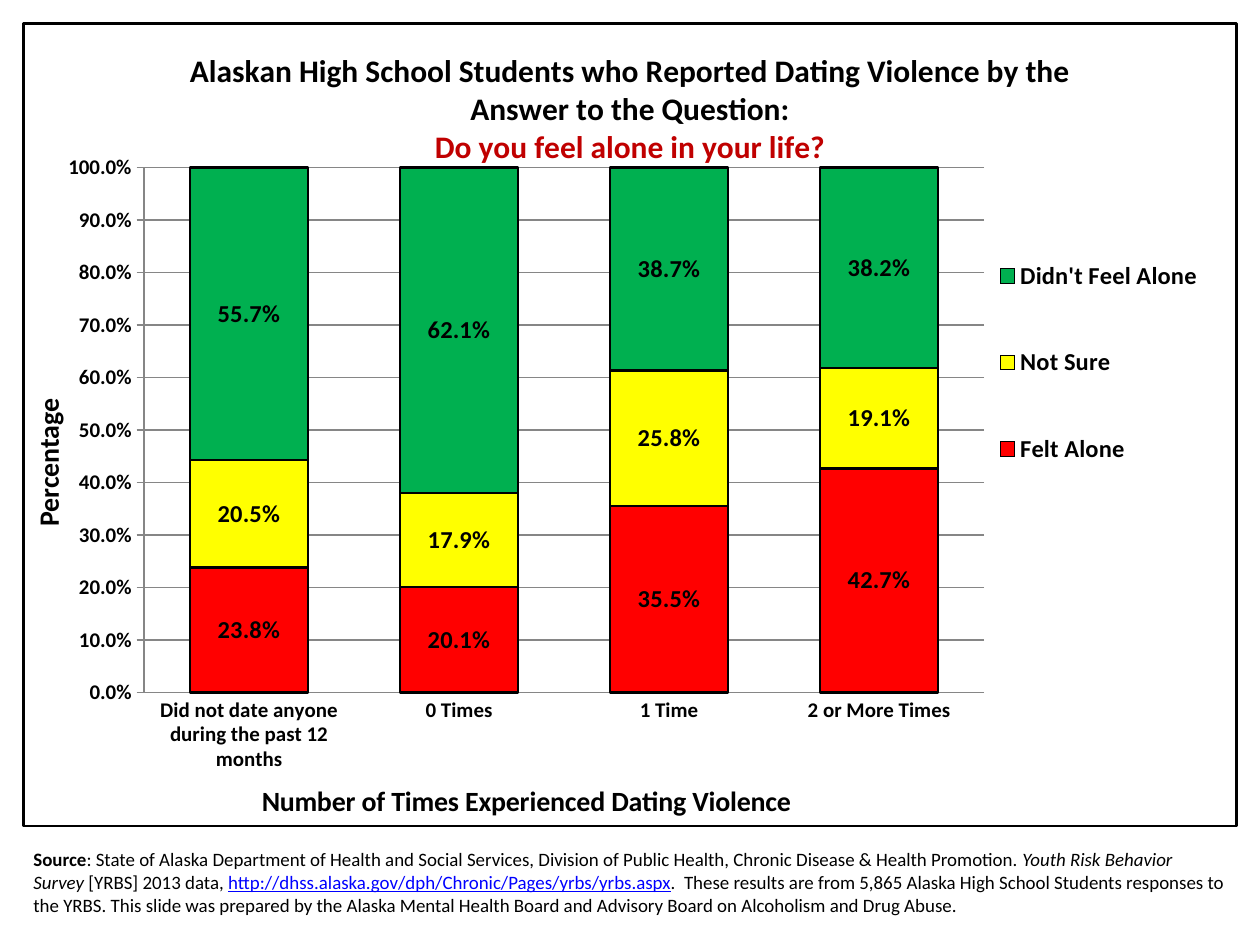
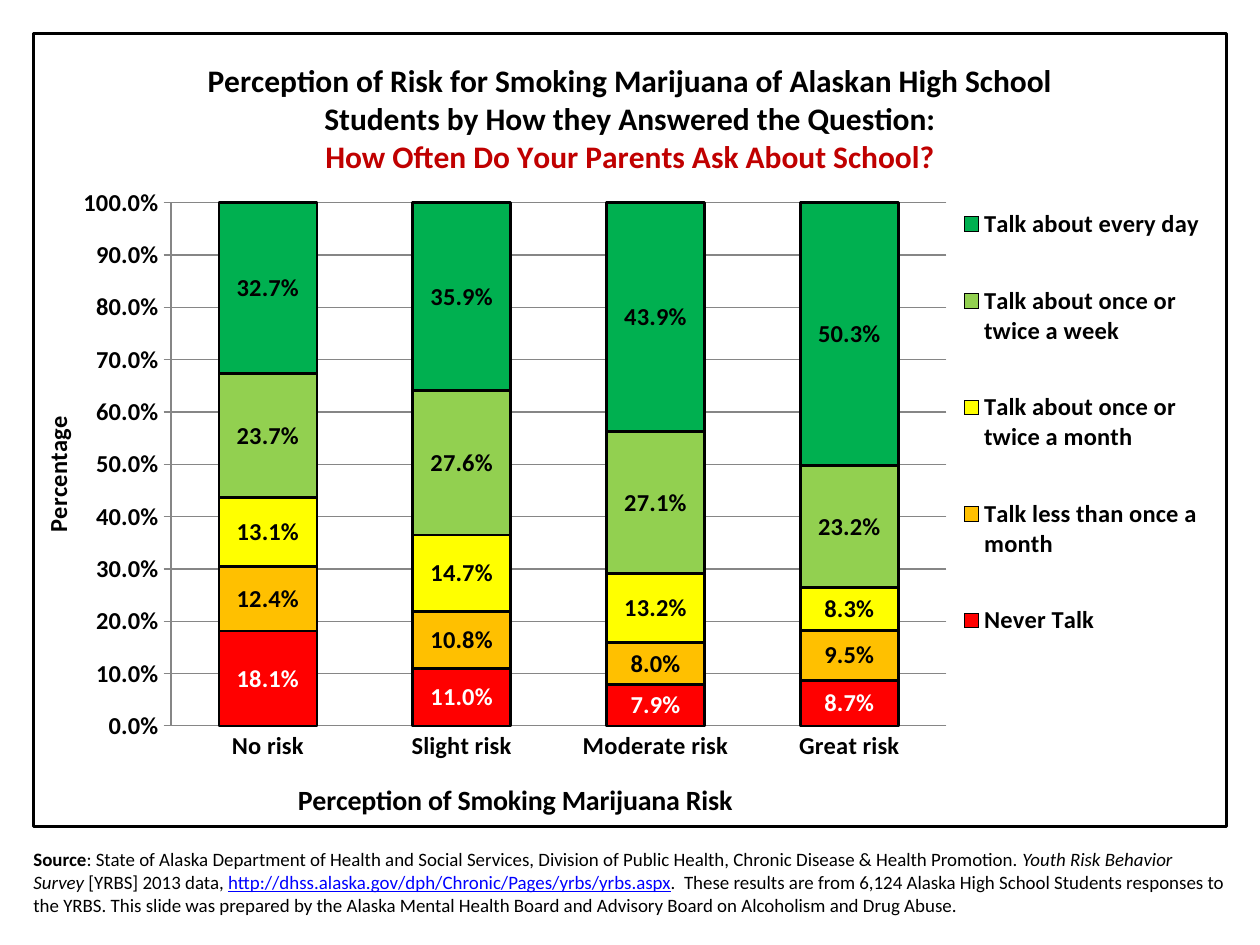
import dataclasses
import typing

import pptx
import pptx.chart.axis
import pptx.chart.chart
import pptx.chart.data
import pptx.dml.color
import pptx.enum.chart
import pptx.enum.text
import pptx.oxml
import pptx.oxml.ns
import pptx.slide
import pptx.text.text
import pptx.util

PX = 914400 / 126
SLIDE_WIDTH, SLIDE_HEIGHT = 1260, 945
FONT = "Calibri"
PERCENT = "0.0%"

RGB = pptx.dml.color.RGBColor
BLACK = RGB(0x00, 0x00, 0x00)
WHITE = RGB(0xFF, 0xFF, 0xFF)
GRID_GRAY = RGB(0x86, 0x86, 0x86)
QUESTION_RED = RGB(0xC0, 0x00, 0x00)
LINK_BLUE = RGB(0x00, 0x00, 0xFF)
RED = RGB(0xFF, 0x00, 0x00)
ORANGE = RGB(0xFF, 0xC0, 0x00)
YELLOW = RGB(0xFF, 0xFF, 0x00)
LIGHT_GREEN = RGB(0x92, 0xD0, 0x50)
GREEN = RGB(0x00, 0xB0, 0x50)


class Box(typing.NamedTuple):
    """A rectangle on the slide, in px."""
    left: int
    top: int
    width: int = 0
    height: int = 0

    def emu(self) -> list[int]:
        return [round(length * PX) for length in self]


class Answer(typing.NamedTuple):
    name: str
    color: RGB
    shares: tuple[float, ...]
    label_color: RGB = BLACK


class AxisStyle(typing.NamedTuple):
    title: str
    title_at: Box
    title_size: int
    label_size: int


@dataclasses.dataclass(frozen=True)
class Survey:
    heading: str
    question: str
    students: str
    groups: tuple[str, ...]
    answers: tuple[Answer, ...]
    frame: Box
    plot: Box
    legend: Box
    group_axis: AxisStyle
    percent_axis: AxisStyle
    gap: int


SOURCE_BOX = Box(21, 840, 1218, 84)

SURVEYS = (
    Survey(
        heading="Alaskan High School Students who Reported Dating Violence "
                "by the Answer to the Question:",
        question="Do you feel alone in your life?",
        students="5,865",
        groups=("Did not date anyone during the past 12 months",
                "0 Times", "1 Time", "2 or More Times"),
        answers=(
            Answer("Felt Alone", RED, (0.238, 0.201, 0.355, 0.427)),
            Answer("Not Sure", YELLOW, (0.205, 0.179, 0.258, 0.191)),
            Answer("Didn't Feel Alone", GREEN, (0.557, 0.621, 0.387, 0.382)),
        ),
        frame=Box(22, 22, 1216, 806),
        plot=Box(143, 167, 842, 527),
        legend=Box(994, 204, 212, 317),
        group_axis=AxisStyle("Number of Times Experienced Dating Violence",
                             Box(256, 779), 16, 12),
        percent_axis=AxisStyle("Percentage", Box(23, 394), 16, 12),
        gap=78,
    ),
    Survey(
        heading="Perception of Risk for Smoking Marijuana of Alaskan High School "
                "Students by How they Answered the Question:",
        question="How Often Do Your Parents Ask About School?",
        students="6,124",
        groups=("No risk", "Slight risk", "Moderate risk", "Great risk"),
        answers=(
            Answer("Never Talk", RED, (0.181, 0.11, 0.079, 0.087), WHITE),
            Answer("Talk less than once a month", ORANGE,
                   (0.124, 0.108, 0.08, 0.095)),
            Answer("Talk about once or twice a month", YELLOW,
                   (0.131, 0.147, 0.132, 0.083)),
            Answer("Talk about once or twice a week", LIGHT_GREEN,
                   (0.237, 0.276, 0.271, 0.232)),
            Answer("Talk about every day", GREEN, (0.327, 0.359, 0.439, 0.503)),
        ),
        frame=Box(32, 32, 1196, 796),
        plot=Box(170, 202, 777, 525),
        legend=Box(958, 162, 250, 521),
        group_axis=AxisStyle("Perception of Smoking Marijuana Risk",
                             Box(292, 777), 16, 14),
        percent_axis=AxisStyle("Percentage", Box(35, 412), 14, 14),
        gap=98,
    ),
)


def set_font(font: pptx.text.text.Font, size: float, color: RGB = BLACK,
             bold: bool = True) -> None:
    font.name = FONT
    font.size = pptx.util.Pt(size)
    font.bold = bold
    font.color.rgb = color


def add_run(paragraph, text: str, size: float, color: RGB = BLACK,
            bold: bool = True) -> pptx.text.text.Font:
    run = paragraph.add_run()
    run.text = text
    set_font(run.font, size, color, bold)
    return run.font


def find_part(element, tag: str):
    return element.find(".//" + pptx.oxml.ns.qn(tag))


def place(part, box: Box, frame: Box) -> None:
    """Give a chart part (XML element) a fixed place inside the chart frame."""
    qn = pptx.oxml.ns.qn
    fractions = {"x": (box.left - frame.left) / frame.width,
                 "y": (box.top - frame.top) / frame.height}
    if box.width:
        fractions |= {"w": box.width / frame.width, "h": box.height / frame.height}
    target = '<c:layoutTarget val="inner"/>' if part.tag == qn("c:plotArea") else ""
    modes = "".join(f'<c:{key}Mode val="edge"/>' for key in "xy")
    values = "".join(f'<c:{key} val="{value:.4f}"/>'
                     for key, value in fractions.items())
    layout = pptx.oxml.parse_xml(
        f'<c:layout {pptx.oxml.ns.nsdecls("c")}><c:manualLayout>'
        f'{target}{modes}{values}</c:manualLayout></c:layout>')
    previous = part.find(qn("c:layout"))
    if previous is not None:
        part.remove(previous)
    overlay = part.find(qn("c:overlay"))
    if overlay is None:
        part.insert(0, layout)
    else:
        overlay.addprevious(layout)


def add_border(chart: pptx.chart.chart.Chart) -> None:
    border = pptx.oxml.parse_xml(
        f'<c:spPr {pptx.oxml.ns.nsdecls("c", "a")}>'
        f'<a:solidFill><a:srgbClr val="{WHITE}"/></a:solidFill>'
        f'<a:ln w="{pptx.util.Pt(1.5)}"><a:solidFill><a:srgbClr val="{BLACK}"/>'
        '</a:solidFill></a:ln></c:spPr>')
    chart.element.find(pptx.oxml.ns.qn("c:txPr")).addprevious(border)


def style_axis(axis: pptx.chart.axis.CategoryAxis | pptx.chart.axis.ValueAxis,
               style: AxisStyle, frame: Box) -> None:
    set_font(axis.tick_labels.font, style.label_size)
    axis.format.line.color.rgb = GRID_GRAY
    axis.format.line.width = pptx.util.Pt(0.75)
    title = axis.axis_title
    add_run(title.text_frame.paragraphs[0], style.title, style.title_size)
    place(title.element, style.title_at, frame)


def add_survey_chart(slide: pptx.slide.Slide, survey: Survey) -> None:
    data = pptx.chart.data.CategoryChartData(number_format=PERCENT)
    data.categories = survey.groups
    for answer in survey.answers:
        data.add_series(answer.name, answer.shares)
    chart = slide.shapes.add_chart(
        pptx.enum.chart.XL_CHART_TYPE.COLUMN_STACKED,
        *survey.frame.emu(), data).chart
    set_font(chart.font, 10, bold=False)
    add_border(chart)

    chart.has_title = True
    title = chart.chart_title.text_frame
    add_run(title.paragraphs[0], survey.heading, 18)
    add_run(title.add_paragraph(), survey.question, 18, QUESTION_RED)

    chart.has_legend = True
    chart.legend.position = pptx.enum.chart.XL_LEGEND_POSITION.RIGHT
    chart.legend.include_in_layout = False
    set_font(chart.legend.font, 14)
    place(find_part(chart.element, "c:legend"), survey.legend, survey.frame)
    place(find_part(chart.element, "c:plotArea"), survey.plot, survey.frame)

    ticks = pptx.enum.chart.XL_TICK_MARK
    style_axis(chart.category_axis, survey.group_axis, survey.frame)
    chart.category_axis.major_tick_mark = ticks.NONE
    percent = chart.value_axis
    style_axis(percent, survey.percent_axis, survey.frame)
    find_part(percent.axis_title.element, "a:bodyPr").set("rot", "-5400000")
    percent.major_tick_mark = ticks.OUTSIDE
    percent.minimum_scale, percent.maximum_scale, percent.major_unit = 0, 1, 0.1
    percent.tick_labels.number_format = PERCENT
    percent.tick_labels.number_format_is_linked = False
    percent.major_gridlines.format.line.color.rgb = GRID_GRAY
    percent.major_gridlines.format.line.width = pptx.util.Pt(0.75)

    plot = chart.plots[0]
    plot.gap_width, plot.overlap = survey.gap, 100
    plot.vary_by_categories = False
    for series, answer in zip(plot.series, survey.answers):
        series.invert_if_negative = False
        series.format.fill.solid()
        series.format.fill.fore_color.rgb = answer.color
        series.format.line.color.rgb = BLACK
        series.format.line.width = pptx.util.Pt(1.5)
        labels = series.data_labels
        labels.show_value = True
        labels.number_format = PERCENT
        labels.number_format_is_linked = False
        set_font(labels.font, 14, answer.label_color)


def add_source(slide: pptx.slide.Slide, students: str) -> None:
    frame = slide.shapes.add_textbox(*SOURCE_BOX.emu()).text_frame
    frame.word_wrap = True
    frame.vertical_anchor = pptx.enum.text.MSO_ANCHOR.MIDDLE
    paragraph = frame.paragraphs[0]

    def write(text: str, color: RGB = BLACK,
              bold: bool = False) -> pptx.text.text.Font:
        return add_run(paragraph, text, 10.8, color, bold)

    write("Source", bold=True)
    write(": State of Alaska Department of Health and Social Services, Division of "
          "Public Health, Chronic Disease & Health Promotion. ")
    write("Youth Risk Behavior Survey").italic = True
    write(" [YRBS] 2013 data, ")
    write("http://dhss.alaska.gov/dph/Chronic/Pages/yrbs/yrbs.aspx",
          LINK_BLUE).underline = True
    write(f".  These results are from {students} Alaska High School Students "
          "responses to the YRBS. This slide was prepared by the Alaska Mental "
          "Health Board and Advisory Board on Alcoholism and Drug Abuse.")


def main() -> None:
    deck = pptx.Presentation()
    deck.slide_width = round(SLIDE_WIDTH * PX)
    deck.slide_height = round(SLIDE_HEIGHT * PX)
    for survey in SURVEYS:
        slide = deck.slides.add_slide(deck.slide_layouts[6])
        add_source(slide, survey.students)
        add_survey_chart(slide, survey)
    deck.save("out.pptx")


if __name__ == "__main__":
    main()
